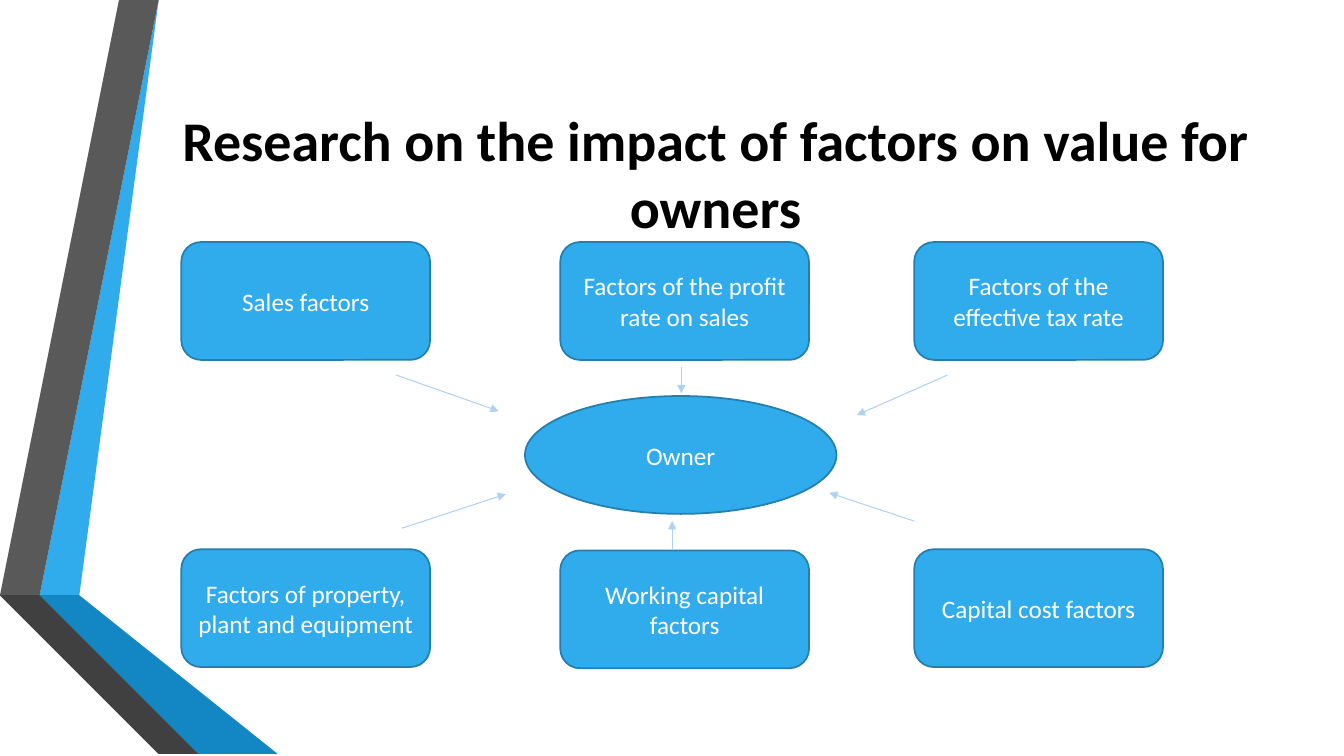
from dataclasses import dataclass

from pptx import Presentation
from pptx.dml.color import RGBColor
from pptx.enum.shapes import MSO_CONNECTOR as Link, MSO_SHAPE as Kind
from pptx.enum.text import MSO_ANCHOR as Anchor, MSO_AUTO_SIZE as Fit, PP_ALIGN as Align
from pptx.oxml.ns import qn
from pptx.util import Cm, Pt
from lxml.etree import SubElement

FONT = "Calibri"
BLUE, EDGE, PALE = "30ACEC", "247FAF", "AED2F4"
BLACK, WHITE = "000000", "FFFFFF"
WIDE, HIGH = 33.87, 19.05
LEFT, MID, RIGHT = 4.57, 14.12, 23.04
TOP, LOW = 6.1, 13.84
BOX_W, BOX_H = 6.27, 2.97


@dataclass
class Band:
    fill: str
    points: list[tuple[float, float]]


@dataclass
class Node:
    text: str
    x: float
    y: float
    w: float = BOX_W
    kind: Kind = Kind.ROUNDED_RECTANGLE


@dataclass
class Arrow:
    start: tuple[float, float]
    end: tuple[float, float]


BANDS = [
    Band(BLUE, [(1.27, 14.68), (1.96, 14.81), (4.39, 0), (3.68, 0)]),
    Band("595959", [(3.53, 0), (2.82, 0), (0.41, 14.55), (1.12, 14.66)]),
    Band("262626", [(0.41, 14.55), (3.68, HIGH), (3.84, HIGH)]),
    Band("0C5A82", [(1.27, 14.71), (5.28, HIGH), (5.44, HIGH)]),
    Band("1287C3", [(1.27, 14.68), (5.44, HIGH), (7.19, HIGH), (1.96, 14.81)]),
    Band("404040", [(5.13, HIGH), (1.22, 14.81), (1.12, 14.66),
                    (0.41, 14.55), (3.84, HIGH)]),
]
NODES = [
    Node("Sales factors", LEFT, TOP),
    Node("Factors of the profit rate on sales", MID, TOP),
    Node("Factors of the effective tax rate", RIGHT, TOP),
    Node("Working capital factors", MID, LOW + 0.03),
    Node("Capital cost factors", RIGHT, LOW),
    Node("Factors of property, plant and equipment", LEFT, LOW),
    Node("Owner", 13.23, 9.98, 7.85, Kind.OVAL),
]
ARROWS = [
    Arrow((9.98, 9.45), (12.57, 10.36)),
    Arrow((23.88, 9.45), (21.59, 10.46)),
    Arrow((23.04, 13.13), (20.9, 12.42)),
    Arrow((10.13, 13.31), (12.75, 12.45)),
    Arrow((17.17, 9.25), (17.17, 9.91)),
    Arrow((16.94, 13.84), (16.94, 13.13)),
]


def paint(color, code: str) -> None:
    """Set a fill's or line's foreground, or a font's colour, from hex."""
    color.rgb = RGBColor.from_string(code)


def write(shape, text: str, size: float, code: str, bold: bool = False) -> None:
    """Fill a shape with one centred paragraph."""
    frame = shape.text_frame
    frame.text = text
    frame.word_wrap = True
    frame.auto_size = Fit.NONE
    frame.vertical_anchor = Anchor.MIDDLE
    par = frame.paragraphs[0]
    par.alignment = Align.CENTER
    par.font.name, par.font.size, par.font.bold = FONT, Pt(size), bold
    paint(par.font.color, code)


def draw_band(slide, band: Band) -> None:
    first, *rest = band.points
    pen = slide.shapes.build_freeform(*first, scale=Cm(1))
    pen.add_line_segments(rest, close=True)
    shape = pen.convert_to_shape()
    shape.shadow.inherit = False
    shape.fill.solid()
    paint(shape.fill.fore_color, band.fill)
    shape.line.fill.background()


def draw_node(slide, node: Node) -> None:
    shape = slide.shapes.add_shape(
        node.kind, Cm(node.x), Cm(node.y), Cm(node.w), Cm(BOX_H))
    shape.shadow.inherit = False
    shape.fill.solid()
    paint(shape.fill.fore_color, BLUE)
    paint(shape.line.color, EDGE)
    shape.line.width = Pt(1.25)
    write(shape, node.text, 18, WHITE)


def draw_arrow(slide, arrow: Arrow) -> None:
    ends = [Cm(v) for v in arrow.start + arrow.end]
    link = slide.shapes.add_connector(Link.STRAIGHT, *ends)
    paint(link.line.color, PALE)
    link.line.width = Pt(0.75)
    SubElement(link.line._get_or_add_ln(), qn("a:tailEnd"), type="triangle")
    SubElement(link._element.spPr, qn("a:effectLst"))


def main() -> None:
    deck = Presentation()
    deck.slide_width, deck.slide_height = Cm(WIDE), Cm(HIGH)
    slide = deck.slides.add_slide(deck.slide_layouts[5])

    title = slide.shapes.title
    title.left, title.top = Cm(4.11), Cm(1.9)
    title.width, title.height = Cm(27.84), Cm(4.88)
    write(title, "Research on the impact of factors on value for owners",
          40, BLACK, bold=True)

    for band in BANDS:
        draw_band(slide, band)
    for node in NODES:
        draw_node(slide, node)
    for arrow in ARROWS:
        draw_arrow(slide, arrow)
    deck.save("out.pptx")


if __name__ == "__main__":
    main()
